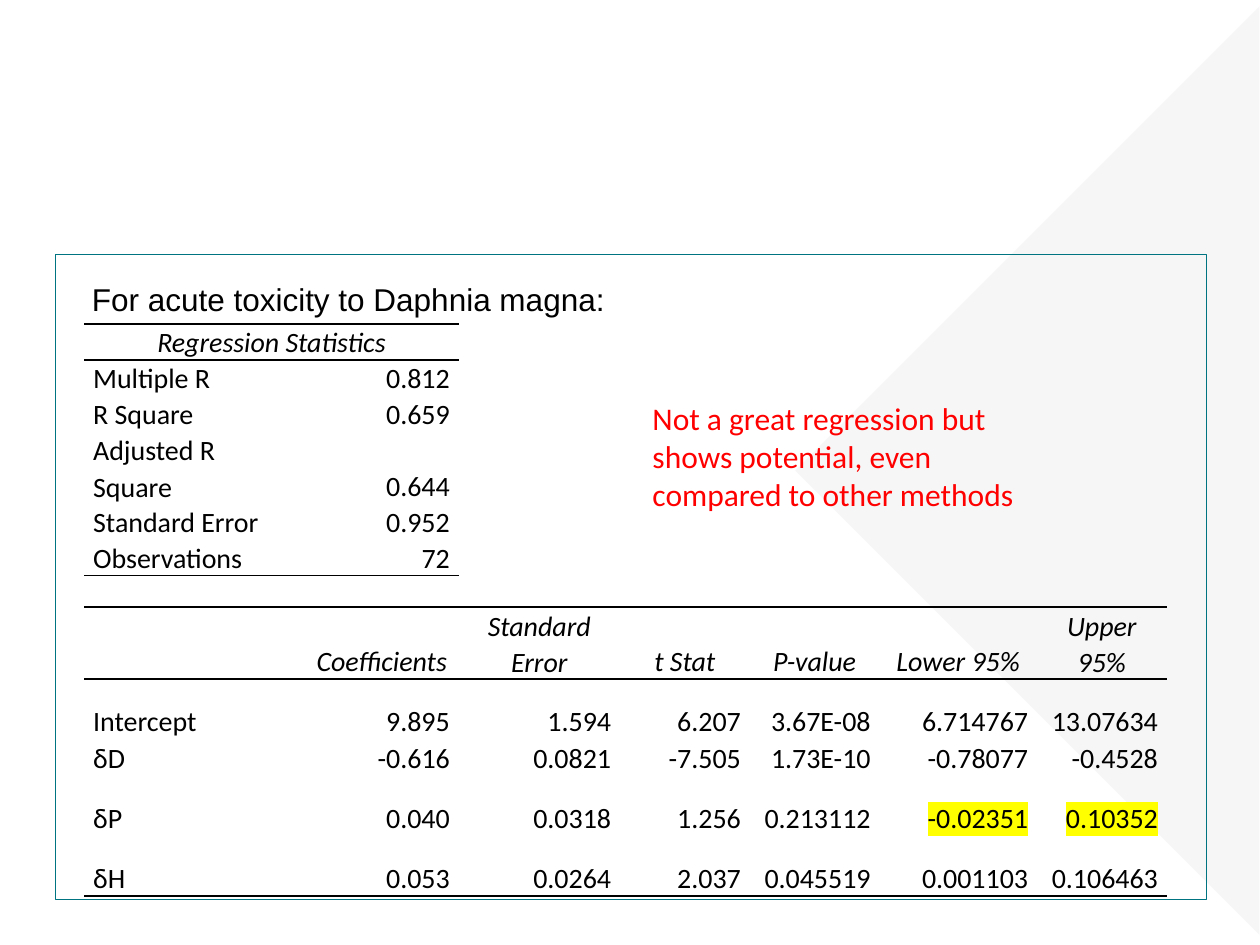
from lxml.etree import SubElement
from pptx import Presentation
from pptx.dml.color import RGBColor
from pptx.enum.shapes import MSO_SHAPE as SHAPE
from pptx.enum.text import MSO_ANCHOR as ANCHOR, PP_ALIGN as ALIGN
from pptx.oxml import parse_xml
from pptx.oxml.ns import nsdecls, qn
from pptx.util import Inches, Pt

COLORS = {
    "black": "000000",
    "wedge": "F3F3F3",
    "frame": "007581",
    "remark": "FF0000",
    "highlight": "FFFF00",
}

presentation = Presentation()
presentation.slide_width = Inches(10)
presentation.slide_height = Inches(7.5)
slide = presentation.slides.add_slide(presentation.slide_layouts[6])


def share(left, top, width, height):
    sides = (presentation.slide_width, presentation.slide_height) * 2
    return [int(side * percent / 100) for side, percent in zip(sides, (left, top, width, height))]


def style_text(paragraph, font_name, size, color):
    paragraph.font.name = font_name
    paragraph.font.size = Pt(size)
    paragraph.font.color.rgb = RGBColor.from_string(COLORS[color])


wedge = slide.shapes.add_shape(SHAPE.RIGHT_TRIANGLE, *share(73.9, 15.07, 52.1, 69.47))
wedge.rotation = 45
wedge.shadow.inherit = False
wedge.fill.solid()
wedge.fill.fore_color.rgb = RGBColor.from_string(COLORS["wedge"])
SubElement(wedge.fill._xPr.find(".//" + qn("a:srgbClr")), qn("a:alpha"), val="70000")
wedge.line.fill.background()

frame = slide.shapes.add_shape(SHAPE.RECTANGLE, *share(4.4, 26.93, 91.3, 68.27))
frame.shadow.inherit = False
frame.fill.background()
frame.line.color.rgb = RGBColor.from_string(COLORS["frame"])
frame.line.width = Pt(0.25)

heading = slide.shapes.add_textbox(*share(4.3, 26.93, 91.3, 8)).text_frame
heading.word_wrap = True
heading.margin_left = Inches(0.3)
heading.text = "For acute toxicity to Daphnia magna:"
heading.paragraphs[0].line_spacing = 1.5
style_text(heading.paragraphs[0], "Arial", 18, "black")

rows = [
    ["Regression Statistics"],
    ["Multiple R", "0.812"],
    ["R Square", "0.659"],
    ["Adjusted R Square", "0.644"],
    ["Standard Error", "0.952"],
    ["Observations", "72"],
    [],
    ["", "Coefficients", "Standard Error", "t Stat", "P-value", "Lower 95%", "Upper 95%"],
    ["Intercept", "9.895", "1.594", "6.207", "3.67E-08", "6.714767", "13.07634"],
    ["δD", "-0.616", "0.0821", "-7.505", "1.73E-10", "-0.78077", "-0.4528"],
    ["δP", "0.040", "0.0318", "1.256", "0.213112", "-0.02351", "0.10352"],
    ["δH", "0.053", "0.0264", "2.037", "0.045519", "0.001103", "0.106463"],
]
column_shares = [17.5, 12.2, 12.8, 10.3, 10.3, 12.5, 10.3]
tall_rows = {3, 7, 8, 10, 11}
header_rows = {0, 7}
ruled_columns = {0: 2, 5: 2, 6: 7, 7: 7, 11: 7}
highlighted = {"-0.02351", "0.10352"}

table = slide.shapes.add_table(len(rows), len(column_shares), *share(6.7, 34.27, 85.8, 60.93)).table
table.first_row = False
table.horz_banding = False
table._tbl.tblPr.find(qn("a:tableStyleId")).text = "{2D5ABB26-0587-4C30-8999-92F81FD0307C}"
for column, percent in zip(table.columns, column_shares):
    column.width = int(presentation.slide_width * percent / 100)

for row_index, values in enumerate(rows):
    row_share = 6.4 if row_index in tall_rows else 3.33
    table.rows[row_index].height = int(presentation.slide_height * row_share / 100)
    for column_index in range(len(column_shares)):
        cell = table.cell(row_index, column_index)
        cell.fill.background()
        cell.vertical_anchor = ANCHOR.BOTTOM
        cell.margin_left = cell.margin_right = Inches(0.07)
        cell.margin_top = cell.margin_bottom = 0
        text = values[column_index] if column_index < len(values) else ""
        paragraph = cell.text_frame.paragraphs[0]
        style_text(paragraph, "Calibri", 16 if text else 12, "black")
        if text:
            run = paragraph.add_run()
            run.text = text
            paragraph.line_spacing = 1.07
            paragraph.font.italic = row_index in header_rows
            if row_index in header_rows:
                paragraph.alignment = ALIGN.CENTER
            elif column_index:
                paragraph.alignment = ALIGN.RIGHT
            if text in highlighted:
                mark = SubElement(run._r.get_or_add_rPr(), qn("a:highlight"))
                SubElement(mark, qn("a:srgbClr"), val=COLORS["highlight"])
        edges = ["lnB", "lnT"] if row_index == 0 else ["lnB"]
        if column_index < ruled_columns.get(row_index, 0):
            for edge in edges:
                cell._tc.get_or_add_tcPr().insert(0, parse_xml(
                    f'<a:{edge} {nsdecls("a")} w="{Pt(1)}"><a:solidFill>'
                    f'<a:srgbClr val="{COLORS["black"]}"/></a:solidFill></a:{edge}>'))
table.cell(0, 0).merge(table.cell(0, 1))

remark = slide.shapes.add_textbox(*share(50.8, 41.6, 33.9, 13.47)).text_frame
remark.word_wrap = True
remark.text = "Not a great regression but shows potential, even compared to other methods"
style_text(remark.paragraphs[0], "Calibri", 18, "remark")

presentation.save("out.pptx")
